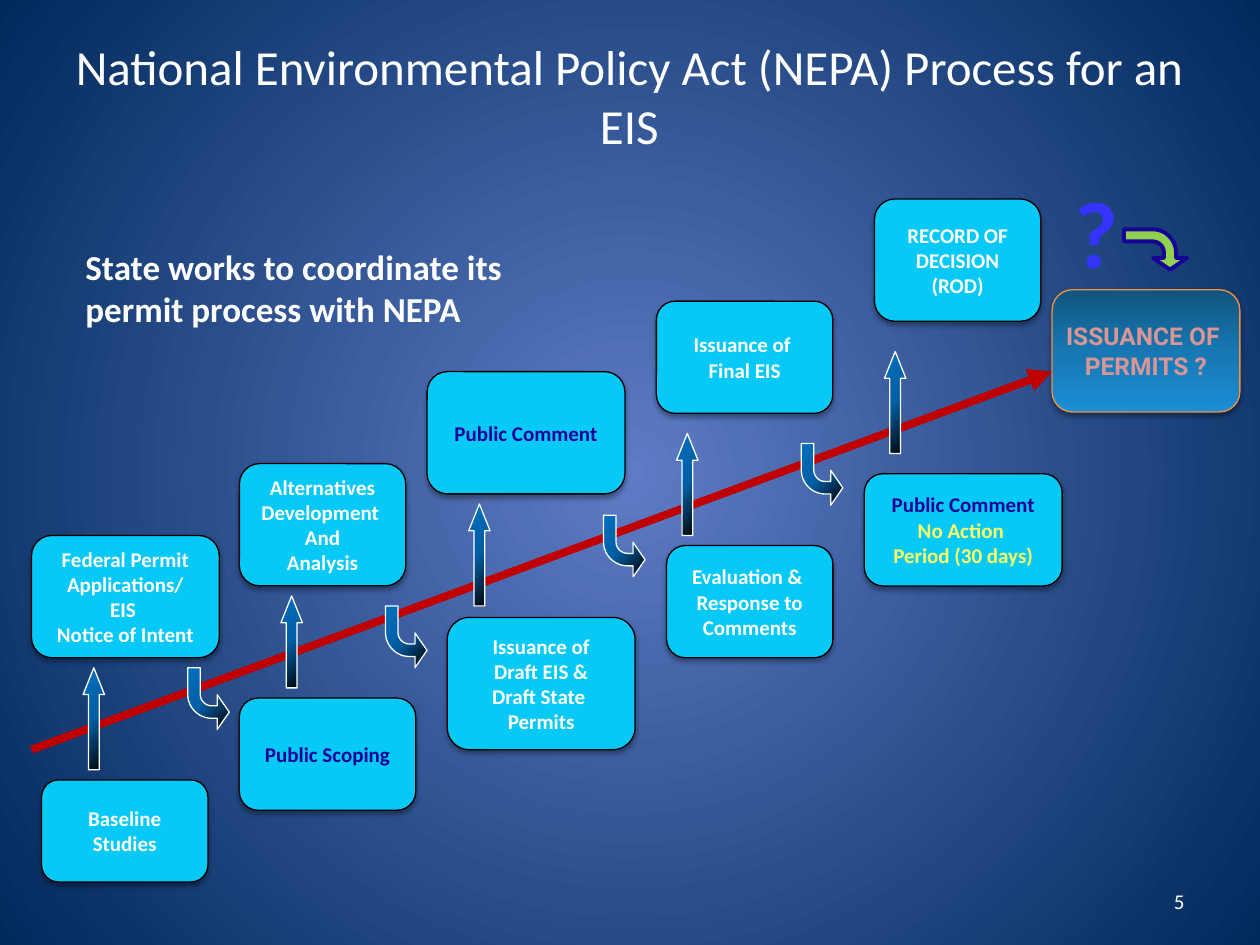
from lxml import etree
from pptx import Presentation
from pptx.dml.color import RGBColor
from pptx.enum.shapes import MSO_CONNECTOR, MSO_SHAPE as Preset
from pptx.enum.text import MSO_ANCHOR as Anchor, PP_ALIGN as Align
from pptx.oxml import parse_xml
from pptx.oxml.ns import nsdecls, qn
from pptx.util import Inches, Pt

COLORS = {
    "white": "FFFFFF", "black": "000000", "cyan": "07C9F7", "navy": "170298",
    "yellow": "FFFF66", "rose": "D99694", "orange": "F69240", "red": "C00000",
    "green": "92D050", "violet": "3434FE",
}
RGB = {name: RGBColor.from_string(value) for name, value in COLORS.items()}
CENTER_GLOW = '<a:path path="circle"><a:fillToRect l="50000" t="50000" r="50000" b="50000"/></a:path>'
CORNER_GLOW = '<a:path path="circle"><a:fillToRect l="100000" t="100000"/></a:path>'
DOWNWARD = '<a:lin ang="5400000" scaled="0"/>'
ARROW_STOPS = [(0, "000000"), (50, "005EA2"), (100, "0070C0")]
BEND = (0.3, 0.42, 0.29, 0.58)


def set_gradient(properties, stops, direction):
    stop_list = "".join(
        f'<a:gs pos="{position * 1000}"><a:srgbClr val="{color}"/></a:gs>'
        for position, color in stops)
    gradient = parse_xml(
        f'<a:gradFill {nsdecls("a")} rotWithShape="1"><a:gsLst>{stop_list}</a:gsLst>'
        f'{direction}</a:gradFill>')
    properties.replace(properties.find(qn("a:solidFill")), gradient)


def write_lines(frame, lines, size, align=Align.CENTER, bold=True, font="Calibri"):
    for index, (text, color) in enumerate(lines):
        paragraph = frame.paragraphs[0] if index == 0 else frame.add_paragraph()
        paragraph.text = text
        paragraph.alignment = align
        paragraph.font.name = font
        paragraph.font.size = Pt(size)
        paragraph.font.bold = bold
        paragraph.font.color.rgb = RGB[color]


prs = Presentation()
prs.slide_width, prs.slide_height = Inches(10), Inches(7.5)
slide = prs.slides.add_slide(prs.slide_layouts[6])
shapes = slide.shapes
slide.background.fill.solid()
slide.background.fill.fore_color.rgb = RGB["navy"]
set_gradient(slide._element.find(".//" + qn("p:bgPr")),
             [(0, "5E7CC5"), (100, "00295C")], CENTER_GLOW)

steps = [
    (0.33, 6.19, 1.32, 0.81, [("Baseline", "white"), ("Studies", "white")]),
    (0.25, 4.25, 1.49, 0.97, [("Federal Permit", "white"), ("Applications/", "white"),
                              ("EIS ", "white"), ("Notice of Intent", "white")]),
    (1.9, 5.54, 1.4, 0.89, [("Public Scoping", "navy")]),
    (1.9, 3.68, 1.32, 0.97, [("Alternatives", "white"), ("Development ", "white"),
                             ("And", "white"), ("Analysis", "white")]),
    (3.55, 4.9, 1.49, 1.05, [("Issuance of", "white"), ("Draft EIS &", "white"),
                             ("Draft State ", "white"), ("Permits", "white")]),
    (3.39, 2.95, 1.57, 0.97, [("Public Comment", "navy")]),
    (5.29, 4.33, 1.32, 0.89, [("Evaluation & ", "white"), ("Response to", "white"),
                              ("Comments", "white")]),
    (5.21, 2.39, 1.4, 0.89, [("Issuance of ", "white"), ("Final EIS", "white")]),
    (6.86, 3.76, 1.57, 0.89, [("Public Comment", "navy"), ("No Action ", "yellow"),
                              ("Period (30 days)", "yellow")]),
    (6.94, 1.58, 1.32, 0.97, [("RECORD OF", "white"), ("DECISION", "white"),
                              ("(ROD)", "white")]),
    (8.35, 2.3, 1.49, 0.97, [("ISSUANCE OF ", "rose"), ("PERMITS ?", "rose")]),
]
for left, top, width, height, lines in steps:
    is_permit = lines[0][1] == "rose"
    step = shapes.add_shape(Preset.FLOWCHART_ALTERNATE_PROCESS, Inches(left), Inches(top),
                            Inches(width), Inches(height))
    step.fill.solid()
    step.fill.fore_color.rgb = RGB["cyan"]
    step.line.color.rgb = RGB["orange" if is_permit else "black"]
    step.line.width = Pt(0.75)
    step.shadow.inherit = False
    step._element.spPr.find(qn("a:effectLst")).append(parse_xml(
        f'<a:outerShdw {nsdecls("a")} blurRad="{Pt(3.1)}" dist="{Pt(1.8)}" dir="5400000" '
        'rotWithShape="0"><a:srgbClr val="000000"><a:alpha val="35000"/></a:srgbClr>'
        '</a:outerShdw>'))
    step.text_frame.word_wrap = False
    step.text_frame.vertical_anchor = Anchor.MIDDLE
    if is_permit:
        set_gradient(step._element.spPr,
                     [(0, "10547E"), (50, "1778B4"), (100, "1B8ED5")], DOWNWARD)
        write_lines(step.text_frame, lines, 14, font="Roboto")
    else:
        write_lines(step.text_frame, lines, 12)

timeline = shapes.add_connector(MSO_CONNECTOR.STRAIGHT, Inches(0.25), Inches(5.95),
                                Inches(8.35), Inches(2.95))
timeline.line.color.rgb = RGB["red"]
timeline.line.width = Pt(4.5)
etree.SubElement(timeline.line._get_or_add_ln(), qn("a:tailEnd"), type="triangle")
etree.SubElement(timeline._element.spPr, qn("a:effectLst"))

up_arrows = [(0.66, 5.3, 0.81), (2.23, 4.73, 0.73), (3.72, 4, 0.81),
             (5.37, 3.44, 0.81), (7.02, 2.79, 0.81)]
bent_arrows = [(1.49, 5.3), (3.06, 4.81), (4.79, 4.09), (6.36, 3.52)]
arrows = [(Preset.UP_ARROW, left, top, 0.17, height, (0.5, 1.25))
          for left, top, height in up_arrows]
arrows += [(Preset.BENT_ARROW, left, top, 0.33, 0.49, BEND) for left, top in bent_arrows]
arrows.append((Preset.BENT_ARROW, 9.01, 1.73, 0.32, 0.5, BEND))
for preset, left, top, width, height, adjustments in arrows:
    is_permit = left > 9
    arrow = shapes.add_shape(preset, Inches(left), Inches(top), Inches(width), Inches(height))
    for index, value in enumerate(adjustments):
        arrow.adjustments[index] = value
    arrow.fill.solid()
    arrow.fill.fore_color.rgb = RGB["green"]
    arrow.line.color.rgb = RGB["navy" if is_permit else "white"]
    arrow.line.width = Pt(2.25 if is_permit else 0.75)
    arrow.shadow.inherit = False
    if is_permit:
        arrow.rotation = 90
    else:
        set_gradient(arrow._element.spPr, ARROW_STOPS, CORNER_GLOW)
        if preset == Preset.BENT_ARROW:
            arrow._element.spPr.xfrm.set("flipV", "1")

captions = [
    (0.33, 0.34, 9.33, 0.83, "National Environmental Policy Act (NEPA) Process for an EIS",
     28, "white", Align.CENTER, False, Anchor.MIDDLE),
    (8.43, 1.33, 0.5, 0.98, "?", 54, "violet", Align.CENTER, True, Anchor.TOP),
    (0.58, 1.9, 3.97, 0.75, "State works to coordinate its permit process with NEPA",
     20, "white", Align.LEFT, True, Anchor.TOP),
    (7.17, 6.95, 2.33, 0.4, "5", 12, "white", Align.RIGHT, False, Anchor.MIDDLE),
]
for left, top, width, height, text, size, color, align, bold, anchor in captions:
    caption = shapes.add_textbox(Inches(left), Inches(top), Inches(width), Inches(height))
    caption.text_frame.word_wrap = True
    caption.text_frame.vertical_anchor = anchor
    write_lines(caption.text_frame, [(text, color)], size, align, bold)

prs.save("out.pptx")
